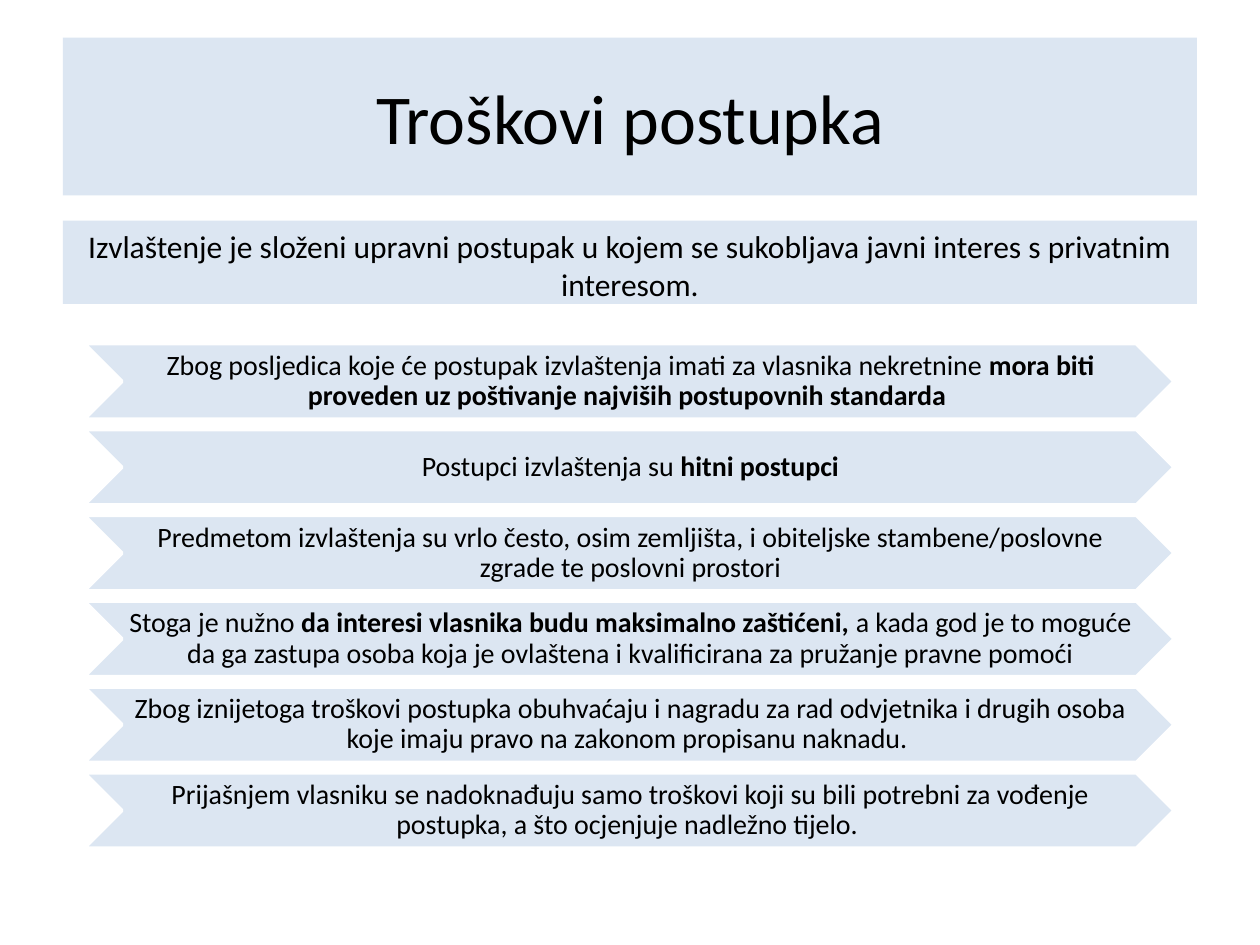
from dataclasses import dataclass

from pptx import Presentation
from pptx import util as u
from pptx.dml.color import RGBColor
from pptx.enum import shapes, text
from pptx.shapes.autoshape import Shape
from pptx.slide import Slide

PALE_BLUE = "DCE6F2"
WHITE = "FFFFFF"
BLACK = "000000"
FONT = "Calibri"


@dataclass(frozen=True)
class Phrase:
    wording: str
    bold: bool = False


@dataclass(frozen=True)
class Block:
    phrases: tuple[Phrase, ...]
    left: float
    top: float
    width: float
    height: float
    size: int
    preset: shapes.MSO_SHAPE = shapes.MSO_SHAPE.RECTANGLE
    anchor: text.MSO_ANCHOR = text.MSO_ANCHOR.MIDDLE


ROW_LEFT, ROW_TOP, ROW_WIDTH, ROW_HEIGHT = 1.7, 6.93, 21.97, 1.52
ROW_STEP = 1.73

HEADING = Block((Phrase("Troškovi postupka"),), 1.27, 0.76, 22.86, 3.18, 40)
INTRODUCTION = Block(
    (Phrase("Izvlaštenje je složeni upravni postupak u kojem se sukobljava "
            "javni interes s privatnim interesom."),),
    1.27, 4.45, 22.86, 1.68, 18, anchor=text.MSO_ANCHOR.TOP,
)
PRINCIPLES = (
    (Phrase("Zbog posljedica koje će postupak izvlaštenja imati za vlasnika nekretnine "),
     Phrase("mora biti proveden uz poštivanje najviših postupovnih standarda ", True)),
    (Phrase("Postupci izvlaštenja su "), Phrase("hitni postupci", True)),
    (Phrase("Predmetom izvlaštenja su vrlo često, osim zemljišta, i obiteljske "
            "stambene/poslovne zgrade te poslovni prostori"),),
    (Phrase("Stoga je nužno "),
     Phrase("da interesi vlasnika budu maksimalno zaštićeni,", True),
     Phrase(" a kada god je to moguće da ga zastupa osoba koja je ovlaštena "
            "i kvalificirana za pružanje pravne pomoći")),
    (Phrase("Zbog iznijetoga troškovi postupka obuhvaćaju i nagradu za rad odvjetnika "
            "i drugih osoba koje imaju pravo na zakonom propisanu naknadu. "),),
    (Phrase("Prijašnjem vlasniku se nadoknađuju samo troškovi koji su bili potrebni "
            "za vođenje postupka, a što ocjenjuje nadležno tijelo. "),),
)


def colour(hex_code: str) -> RGBColor:
    return RGBColor.from_string(hex_code)


def draw_block(slide: Slide, block: Block) -> Shape:
    panel = slide.shapes.add_shape(
        block.preset, u.Cm(block.left), u.Cm(block.top), u.Cm(block.width), u.Cm(block.height)
    )
    panel.shadow.inherit = False
    panel.fill.solid()
    panel.fill.fore_color.rgb = colour(PALE_BLUE)
    panel.line.fill.background()

    frame = panel.text_frame
    frame.word_wrap = True
    frame.vertical_anchor = block.anchor
    paragraph = frame.paragraphs[0]
    paragraph.alignment = text.PP_ALIGN.CENTER
    paragraph.font.name = FONT
    paragraph.font.size = u.Pt(block.size)
    paragraph.font.color.rgb = colour(BLACK)
    for phrase in block.phrases:
        run = paragraph.add_run()
        run.text = phrase.wording
        if phrase.bold:
            run.font.bold = True
    return panel


def draw_principle(slide: Slide, row: int, phrases: tuple[Phrase, ...]) -> None:
    chevron = draw_block(slide, Block(
        phrases, ROW_LEFT, ROW_TOP + row * ROW_STEP, ROW_WIDTH, ROW_HEIGHT, 16,
        preset=shapes.MSO_SHAPE.CHEVRON,
    ))
    chevron.line.color.rgb = colour(WHITE)
    chevron.line.width = u.Pt(2)
    frame = chevron.text_frame
    frame.margin_left = u.Cm(0.05)
    frame.margin_right = u.Cm(0)
    frame.margin_top = frame.margin_bottom = u.Cm(0.03)
    frame.paragraphs[0].line_spacing = 0.9


def main() -> None:
    deck = Presentation()
    deck.slide_width, deck.slide_height = u.Cm(25.4), u.Cm(19.05)
    slide = deck.slides.add_slide(deck.slide_layouts[6])
    draw_block(slide, HEADING)
    draw_block(slide, INTRODUCTION)
    for row, phrases in enumerate(PRINCIPLES):
        draw_principle(slide, row, phrases)
    deck.save("out.pptx")


if __name__ == "__main__":
    main()
